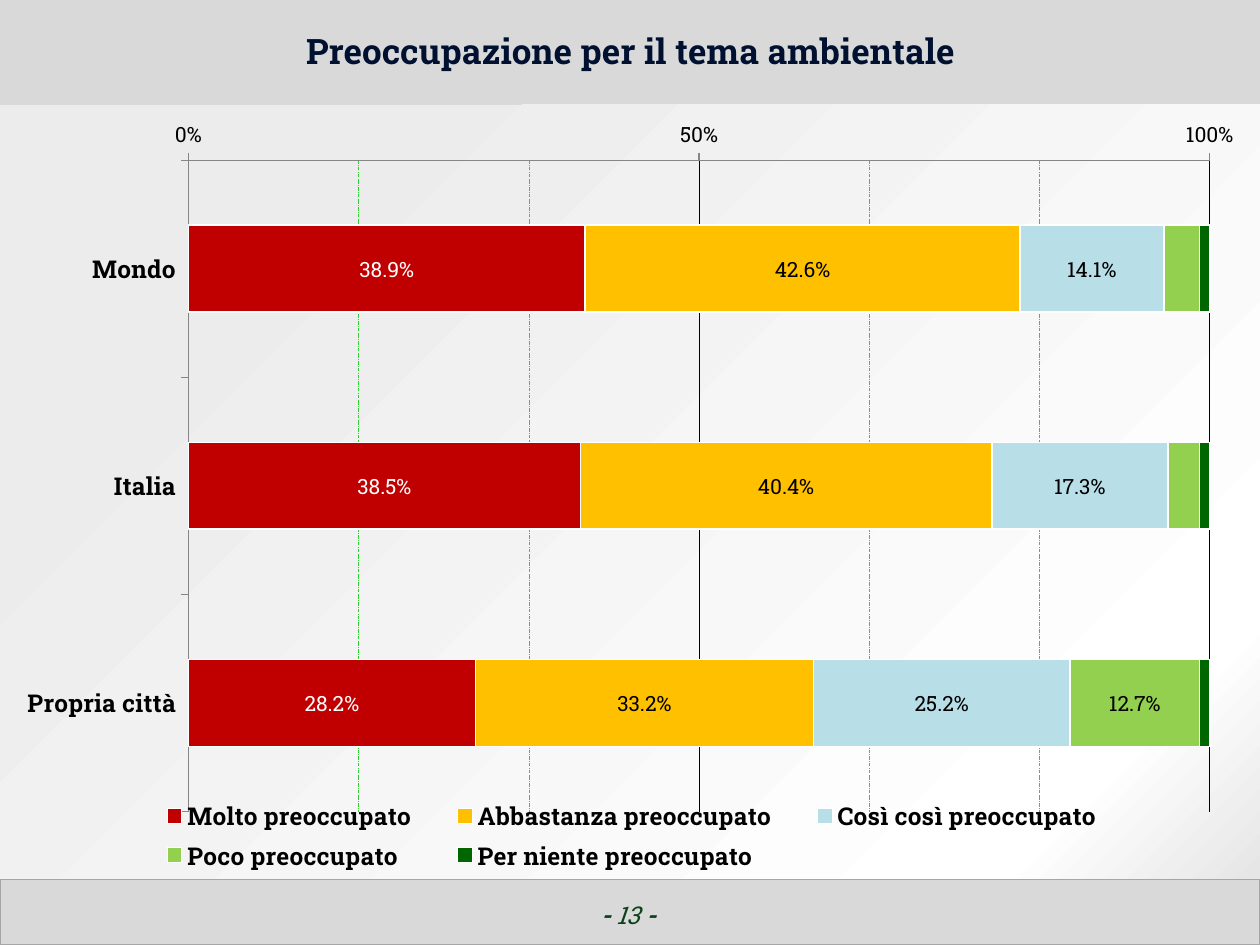
"""Build the slide on concern for the environment, with a stacked bar chart."""
import pptx
import pptx.chart.data
import pptx.dml.color
import pptx.enum.chart
import pptx.enum.shapes
import pptx.enum.text
import pptx.oxml
import pptx.oxml.ns
import pptx.util
from pptx.util import Inches

NS = pptx.oxml.ns.nsdecls("a", "c")
CATS = ["Mondo", "Italia", "Propria città"]
SERIES = [
    ("Molto preoccupato", [0.389, 0.385, 0.282], "C00000", "FFFFFF", []),
    ("Abbastanza preoccupato", [0.426, 0.404, 0.332], "FFC000", "000000", []),
    ("Così così preoccupato", [0.141, 0.173, 0.252], "B8DEE8", "000000", []),
    ("Poco preoccupato", [0.035, 0.031, 0.127], "93D050", "000000", [0, 1]),
    ("Per niente preoccupato", [0.01, 0.01, 0.01], "006600", None, []),
]


def rgb(code):
    return pptx.dml.color.RGBColor.from_string(code)


def xml(text):
    return pptx.oxml.parse_xml(text.replace(">", f" {NS}>", 1))


def layout(x, y, w, h, inner=False):
    target = '<c:layoutTarget val="inner"/>' if inner else ""
    modes = "".join(f'<c:{k}Mode val="edge"/>' for k in "xy")
    sizes = "".join(f'<c:{k} val="{v}"/>' for k, v in zip("xywh", (x, y, w, h)))
    return xml(f"<c:layout><c:manualLayout>{target}{modes}{sizes}"
               "</c:manualLayout></c:layout>")


class Deck:
    face = "Roboto Slab"

    def __init__(self):
        self.prs = pptx.Presentation()
        self.prs.slide_width, self.prs.slide_height = Inches(10), Inches(7.5)
        self.slide = self.prs.slides.add_slide(self.prs.slide_layouts[5])

    def font(self, font, size, color="000000", bold=False, slant=False):
        font.name, font.size = self.face, pptx.util.Pt(size)
        font.bold, font.italic = bold, slant
        font.color.rgb = rgb(color)

    def text(self, para, runs, size, color, slant=False):
        para.alignment = pptx.enum.text.PP_ALIGN.CENTER
        for words, bold in runs:
            run = para.add_run()
            run.text = words
            self.font(run.font, size, color, bold, slant)

    def band(self, top, high, fill, line=None):
        kind = pptx.enum.shapes.MSO_SHAPE.RECTANGLE
        shape = self.slide.shapes.add_shape(
            kind, 0, Inches(top), Inches(10), Inches(high))
        shape.shadow.inherit = False
        shape.fill.solid()
        shape.fill.fore_color.rgb = rgb(fill)
        if line:
            shape.line.color.rgb = rgb(line)
            shape.line.width = pptx.util.Pt(0.75)
        else:
            shape.line.fill.background()
        return shape

    def glow(self, top, high, stops):
        shape = self.band(top, high, "FFFFFF")
        marks = "".join(f'<a:gs pos="{pos * 1000}"><a:srgbClr val="{code}"/></a:gs>'
                        for pos, code in stops)
        grad = xml(f'<a:gradFill><a:gsLst>{marks}</a:gsLst><a:path path="circle">'
                   '<a:fillToRect l="100000" t="100000"/></a:path></a:gradFill>')
        props = shape._element.spPr
        props.replace(props.find(pptx.oxml.ns.qn("a:solidFill")), grad)

    def title(self, words):
        shape = self.slide.shapes.title
        self.slide.shapes._spTree.append(shape._element)
        shape.left, shape.top = Inches(0.16), Inches(0.03)
        shape.width, shape.height = Inches(9.69), Inches(0.79)
        frame = shape.text_frame
        frame.vertical_anchor = pptx.enum.text.MSO_ANCHOR.MIDDLE
        frame.paragraphs[0].line_spacing = pptx.util.Pt(20)
        self.text(frame.paragraphs[0], [(words, True)], 20, "001030")

    def page(self, runs):
        box = self.slide.shapes.add_textbox(
            Inches(3.82), Inches(7.09), Inches(2.33), Inches(0.52))
        box.text_frame.word_wrap = True
        self.text(box.text_frame.paragraphs[0], runs, 14, "0D411A", True)

    def chart(self, cats, series):
        data = pptx.chart.data.CategoryChartData(number_format="0.0%")
        data.categories = cats
        for name, vals, *_ in series:
            data.add_series(name, vals)
        kind = pptx.enum.chart.XL_CHART_TYPE.BAR_STACKED_100
        chart = self.slide.shapes.add_chart(
            kind, Inches(0.03), Inches(0.83), Inches(9.97), Inches(6.14), data).chart
        self.font(chart.font, 14)
        chart.has_title = False
        plot = chart.plots[0]
        plot.gap_width, plot.overlap, plot.vary_by_categories = 150, 100, False
        for item, (_, _, fill, ink, hidden) in zip(plot.series, series):
            self.bars(item, fill, ink, hidden)
        self.axes(chart)
        self.legend(chart)
        area = chart._chartSpace.chart.plotArea
        for old in area.findall(pptx.oxml.ns.qn("c:layout")):
            area.remove(old)
        area.insert(0, layout(0.147, 0.072, 0.813, 0.842, True))

    def bars(self, item, fill, ink, hidden):
        item.format.fill.solid()
        item.format.fill.fore_color.rgb = rgb(fill)
        item.format.line.color.rgb = rgb("FFFFFF")
        item.format.line.width = pptx.util.Pt(1)
        if ink is None:
            return
        labels = item.data_labels
        labels.show_value = True
        labels.number_format, labels.number_format_is_linked = "0.0%", False
        self.font(labels.font, 12, ink)
        for pos, idx in enumerate(hidden):
            labels._element.insert(pos, xml(
                f'<c:dLbl><c:idx val="{idx}"/><c:delete val="1"/></c:dLbl>'))

    def axes(self, chart):
        cat, val = chart.category_axis, chart.value_axis
        for axis, size, bold in ((cat, 14, True), (val, 12, False)):
            self.font(axis.tick_labels.font, size, bold=bold)
            axis.major_tick_mark = pptx.enum.chart.XL_TICK_MARK.OUTSIDE
            axis.minor_tick_mark = pptx.enum.chart.XL_TICK_MARK.NONE
            axis.format.line.color.rgb = rgb("868686")
            axis.format.line.width = pptx.util.Pt(0.75)
        cat.reverse_order = True
        val.minimum_scale, val.maximum_scale = 0, 1
        val.major_unit, val.minor_unit = 0.5, 0.5 / 3
        val.tick_labels.number_format = "0%"
        val.tick_labels.number_format_is_linked = False
        val.has_major_gridlines = val.has_minor_gridlines = True
        grid = val.major_gridlines.format.line
        grid.color.rgb, grid.width = rgb("000000"), pptx.util.Pt(0.25)
        minor = val._element.find(pptx.oxml.ns.qn("c:minorGridlines"))
        minor.append(xml('<c:spPr><a:ln w="3175"><a:solidFill><a:srgbClr val="33CC33"/>'
                         '</a:solidFill><a:prstDash val="lgDashDot"/></a:ln></c:spPr>'))

    def legend(self, chart):
        chart.has_legend = True
        legend = chart.legend
        legend.position = pptx.enum.chart.XL_LEGEND_POSITION.BOTTOM
        legend.include_in_layout = False
        self.font(legend.font, 14, bold=True)
        node = legend._element
        for old in node.findall(pptx.oxml.ns.qn("c:layout")):
            node.remove(old)
        node.insert(1, layout(0.1, 0.89, 0.8, 0.11))


def main():
    deck = Deck()
    deck.band(0, 0.84, "D9D9D9")
    deck.band(6.98, 0.52, "D9D9D9", "A6A6A6")
    deck.glow(0.83, 6.14, [(0, "E6E6E6"), (13, "FFFFFF"), (82, "ECECEC")])
    deck.page([("- ", True), ("13 ", False), ("-", True)])
    deck.title("Preoccupazione per il tema ambientale")
    deck.chart(CATS, SERIES)
    deck.prs.save("out.pptx")


if __name__ == "__main__":
    main()
